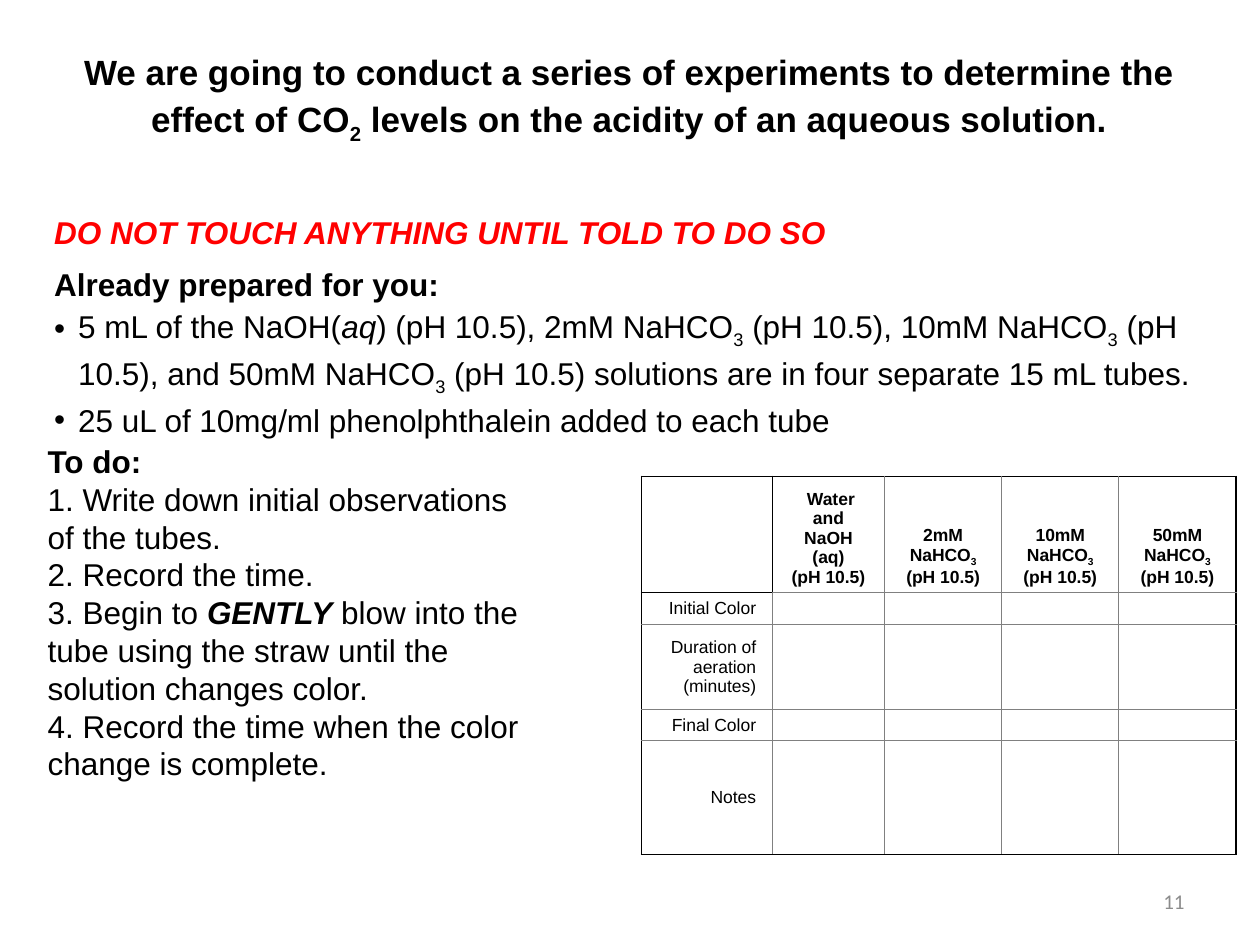
from dataclasses import dataclass
from typing import Any

from lxml.etree import SubElement
from pptx import Presentation
from pptx.dml.color import RGBColor
from pptx.enum.text import MSO_ANCHOR, MSO_AUTO_SIZE, PP_ALIGN
from pptx.oxml.ns import qn
from pptx.util import Inches, Pt


def color(hex_text):
    return RGBColor.from_string(hex_text)


@dataclass
class SlideBuilder:
    slide: Any
    font: str = "Arial"
    black: str = "000000"
    gray: str = "808080"
    red: str = "FF0000"

    def add_runs(self, paragraph, runs, size, align=PP_ALIGN.LEFT, ink=None, font=None):
        paragraph.alignment = align
        for text, style in runs:
            run = paragraph.add_run()
            run.text = text
            run.font.name = font or self.font
            run.font.size = Pt(size)
            run.font.bold = "b" in style
            run.font.italic = "i" in style
            run.font.color.rgb = color(ink or self.black)
            if "s" in style:
                run._r.get_or_add_rPr().set("baseline", "-25000")

    def paragraphs(self, frame, count):
        while len(frame.paragraphs) < count:
            frame.add_paragraph()
        return frame.paragraphs

    def place(self, shape, left, top, width, height, anchor=MSO_ANCHOR.TOP):
        shape.left, shape.top = Inches(left), Inches(top)
        shape.width, shape.height = Inches(width), Inches(height)
        frame = shape.text_frame
        frame.word_wrap = True
        frame.auto_size = MSO_AUTO_SIZE.NONE
        frame.vertical_anchor = anchor
        return frame

    def title(self, runs, *box):
        frame = self.place(self.slide.shapes.title, *box)
        paragraph = frame.paragraphs[0]
        paragraph.line_spacing = 1.1
        self.add_runs(paragraph, runs, 20, PP_ALIGN.CENTER)

    def body(self, items, *box):
        frame = self.place(self.slide.placeholders[1], *box)
        for paragraph, (runs, ink, after, bulleted) in zip(self.paragraphs(frame, len(items)), items):
            paragraph.line_spacing = 1.1
            paragraph.space_before = Pt(0)
            paragraph.space_after = Pt(after)
            self.add_runs(paragraph, runs, 18, ink=ink)
            properties = paragraph._p.get_or_add_pPr()
            indent = Inches(0.19) if bulleted else 0
            properties.set("marL", str(indent))
            properties.set("indent", str(-indent))
            if bulleted:
                SubElement(properties, qn("a:buFont"), typeface="Arial")
                SubElement(properties, qn("a:buChar"), char="•")
            else:
                SubElement(properties, qn("a:buNone"))

    def text(self, lines, *box, margin_right=0.1, size=18, anchor=MSO_ANCHOR.TOP, **style):
        shape = self.slide.shapes.add_textbox(0, 0, 0, 0)
        frame = self.place(shape, *box, anchor)
        frame.margin_right = Inches(margin_right)
        for paragraph, runs in zip(self.paragraphs(frame, len(lines)), lines):
            self.add_runs(paragraph, runs, size, **style)

    def border(self, cell, edges):
        properties = cell._tc.get_or_add_tcPr()
        for tag, ink in edges.items():
            line = SubElement(properties, qn(f"a:{tag}"), w=str(Pt(0.75)))
            fill = SubElement(line, qn("a:solidFill"))
            SubElement(fill, qn("a:srgbClr"), val=ink)

    def cell(self, cell, lines, align, anchor):
        cell.margin_left = cell.margin_right = Inches(0.13)
        cell.margin_top = cell.margin_bottom = Inches(0.04)
        cell.vertical_anchor = anchor
        cell.fill.background()
        for paragraph, runs in zip(self.paragraphs(cell.text_frame, len(lines)), lines):
            self.add_runs(paragraph, runs, 10, align)
        if not lines:
            SubElement(cell.text_frame.paragraphs[0]._p, qn("a:endParaRPr"), sz="1000")

    def table(self, headers, labels, widths, heights, left, top):
        row_count, column_count = len(heights), len(widths)
        frame = self.slide.shapes.add_table(
            row_count, column_count, Inches(left), Inches(top),
            Inches(sum(widths)), Inches(sum(heights)))
        table = frame.table
        table.first_row = table.horz_banding = False
        for column, width in zip(table.columns, widths):
            column.width = Inches(width)
        for row, height in zip(table.rows, heights):
            row.height = Inches(height)
        for row in range(row_count):
            for column in range(column_count):
                cell = table.cell(row, column)
                corner = row == column == 0
                dark = {
                    "lnL": column == 0 or (row, column) == (0, 1),
                    "lnR": corner or column == column_count - 1,
                    "lnT": row == 0 or (row, column) == (1, 0),
                    "lnB": corner or row == row_count - 1,
                }
                self.border(cell, {tag: self.black if on else self.gray for tag, on in dark.items()})
                if row == 0:
                    lines = headers[column - 1] if column else []
                    self.cell(cell, lines, PP_ALIGN.CENTER, MSO_ANCHOR.BOTTOM)
                else:
                    lines = [[(labels[row - 1], "")]] if column == 0 else []
                    self.cell(cell, lines, PP_ALIGN.RIGHT, MSO_ANCHOR.MIDDLE)


def main():
    presentation = Presentation()
    presentation.slide_width, presentation.slide_height = Inches(10), Inches(7.5)
    builder = SlideBuilder(presentation.slides.add_slide(presentation.slide_layouts[1]))

    builder.title([
        ("We are going to conduct a series of experiments to determine the effect of CO", "b"),
        ("2", "bs"),
        (" levels on the acidity of an aqueous solution.", "b"),
    ], 0.33, 0.32, 9.33, 1)

    solutions = [
        ("5 mL of the NaOH(", ""), ("aq", "i"), (") (pH 10.5), 2mM NaHCO", ""), ("3", "s"),
        (" (pH 10.5), 10mM NaHCO", ""), ("3", "s"),
        (" (pH 10.5), and 50mM NaHCO", ""), ("3", "s"),
        (" (pH 10.5) solutions are in four separate 15 mL tubes.", ""),
    ]
    indicator = [("25 uL of 10mg/ml phenolphthalein added to each tube", "")]
    builder.body([
        ([("DO NOT TOUCH ANYTHING UNTIL TOLD TO DO SO", "bi")], builder.red, 6, False),
        ([("Already prepared for you:", "b")], builder.black, 0, False),
        (solutions, builder.black, 0, True),
        (indicator, builder.black, 0, True),
    ], 0.33, 1.61, 9.33, 2.1)

    concentrations = [
        [[(f"{amount}mM NaHCO", "b"), ("3", "bs")], [("(pH 10.5)", "b")]]
        for amount in (2, 10, 50)
    ]
    control = [[(" Water and NaOH (aq)", "b")], [("(pH 10.5)", "b")]]
    builder.table(
        [control, *concentrations],
        ["Initial Color", "Duration of aeration (minutes)", "Final Color", "Notes"],
        [1.04, 0.89, 0.93, 0.93, 0.93], [0.92, 0.26, 0.67, 0.25, 0.9], 5.09, 3.78)

    builder.text([[("11", "")]], 7.17, 6.95, 2.33, 0.4, size=12, anchor=MSO_ANCHOR.MIDDLE,
                 align=PP_ALIGN.RIGHT, ink="8C8C8C", font="Calibri")

    builder.text([
        [("To do:", "b")],
        [("1. Write down initial observations of the tubes.", "")],
        [("2. Record the time.", "")],
        [("3. Begin to ", ""), ("GENTLY", "bi"),
         (" blow into the tube using the straw until the solution changes color.", "")],
        [("4. Record the time when the color change is complete.", "")],
    ], 0.28, 3.46, 4.44, 2.83, margin_right=0.5)

    presentation.save("out.pptx")


if __name__ == "__main__":
    main()
